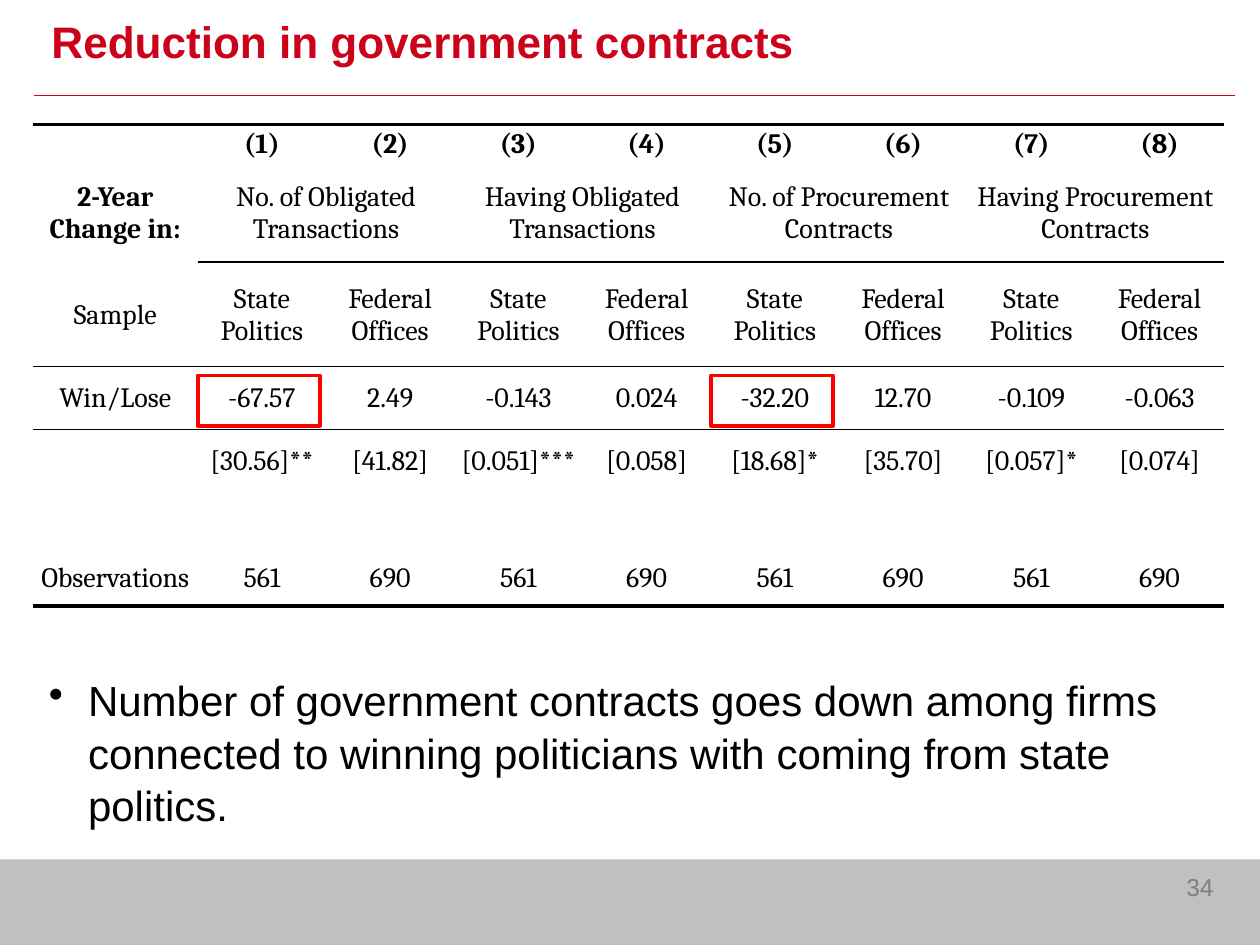
import lxml.etree
import pptx
import pptx.dml.color
import pptx.enum.shapes
import pptx.enum.text
import pptx.oxml
import pptx.oxml.ns
import pptx.util

ALIGN = pptx.enum.text.PP_ALIGN
ANCHOR = pptx.enum.text.MSO_ANCHOR
UNITS = 10
TABLE_LEFT, TABLE_TOP = 2.6, 9.9
COLUMNS = [13.1] + [10.18] * 8
ROWS = [3, 7.9, 8.3, 5, 5, 4.5, 4.5]
THICK, THIN = 2.25, 1
TABLE_TEXT = {"size": pptx.util.Pt(16), "name": "Cambria"}
NO_STYLE = "{2D5ABB26-0587-4C30-8999-92F81FD0307C}"

RESULTS = [
    [""] + [f"({number})" for number in range(1, 9)],
    ["2-Year Change in:", "No. of Obligated Transactions", None,
     "Having Obligated Transactions", None,
     "No. of Procurement Contracts", None,
     "Having Procurement Contracts", None],
    ["Sample"] + ["State Politics", "Federal Offices"] * 4,
    ["Win/Lose", "-67.57", "2.49", "-0.143", "0.024",
     "-32.20", "12.70", "-0.109", "-0.063"],
    ["", "[30.56]**", "[41.82]", "[0.051]***", "[0.058]",
     "[18.68]*", "[35.70]", "[0.057]*", "[0.074]"],
    [""] * 9,
    ["Observations"] + ["561", "690"] * 4,
]


def color(code):
    return pptx.dml.color.RGBColor.from_string(code)


def grid(*lengths):
    return [pptx.util.Inches(length / UNITS) for length in lengths]


def apply(target, values):
    for name, value in values.items():
        setattr(target, name, value)


def borders(row, column):
    """Return the rule widths of a table cell by side."""
    sides = {}
    if row == 0:
        sides["T"] = THICK
    if row == 3 or (row == 2 and column):
        sides["T"] = THIN
    if row == 2 or (row == 1 and column):
        sides["B"] = THIN
    if row == len(ROWS) - 1:
        sides["B"] = THICK
    return sides


class SlideBuilder:
    """Draws elements on one slide, measured in tenths of an inch."""

    def __init__(self, slide):
        self.slide = slide
        self.font = "Arial"

    def rectangle(self, area, fill=None, line=None):
        shape = self.slide.shapes.add_shape(
            pptx.enum.shapes.MSO_SHAPE.RECTANGLE, *grid(*area))
        shape.shadow.inherit = False
        for part, code in ((shape.fill, fill), (shape.line.fill, line)):
            if code:
                part.solid()
                part.fore_color.rgb = color(code)
            else:
                part.background()
        if line:
            shape.line.width = pptx.util.Pt(2)

    def rule(self, start, end, code):
        connector = self.slide.shapes.add_connector(
            pptx.enum.shapes.MSO_CONNECTOR.STRAIGHT, *grid(*start, *end))
        connector.line.color.rgb = color(code)
        connector.line.width = pptx.util.Pt(0.75)
        lxml.etree.SubElement(connector._element.spPr,
                              pptx.oxml.ns.qn("a:effectLst"))

    def text(self, area, words, size, code, bold=False, bullet=False,
             frame_format=None, paragraph_format=None):
        frame = self.slide.shapes.add_textbox(*grid(*area)).text_frame
        apply(frame, {"word_wrap": True, **(frame_format or {})})
        paragraph = frame.paragraphs[0]
        apply(paragraph, paragraph_format or {})
        if bullet:
            properties = paragraph._p.get_or_add_pPr()
            indent = grid(3.1)[0]
            properties.set("marL", str(indent))
            properties.set("indent", str(-indent))
            lxml.etree.SubElement(properties, pptx.oxml.ns.qn("a:buChar"), char="•")
        run = paragraph.add_run()
        run.text = words
        apply(run.font, {"name": self.font, "size": pptx.util.Pt(size), "bold": bold})
        run.font.color.rgb = color(code)

    def border(self, cell, side, width):
        cell._tc.get_or_add_tcPr().append(pptx.oxml.parse_xml(
            f'<a:ln{side} {pptx.oxml.ns.nsdecls("a")} w="{pptx.util.Pt(width)}">'
            '<a:solidFill><a:srgbClr val="000000"/></a:solidFill>'
            f'</a:ln{side}>'))

    def cell(self, cell, words, bold):
        left, bottom = grid(0.1, 0)
        apply(cell, {"margin_left": left, "margin_right": left, "margin_top": left,
                     "margin_bottom": bottom, "vertical_anchor": ANCHOR.MIDDLE})
        paragraph = cell.text_frame.paragraphs[0]
        paragraph.alignment = ALIGN.CENTER
        if not words:
            lxml.etree.SubElement(paragraph._p, pptx.oxml.ns.qn("a:endParaRPr"), sz="1600")
            return
        run = paragraph.add_run()
        run.text = words
        apply(run.font, {**TABLE_TEXT, "bold": bold})
        run.font.color.rgb = color("000000")

    def table(self, contents):
        area = (TABLE_LEFT, TABLE_TOP, sum(COLUMNS), sum(ROWS))
        table = self.slide.shapes.add_table(
            len(ROWS), len(COLUMNS), *grid(*area)).table
        apply(table, {"first_row": False, "horz_banding": False})
        table._tbl.tblPr.find(pptx.oxml.ns.qn("a:tableStyleId")).text = NO_STYLE
        for column, width in zip(table.columns, grid(*COLUMNS)):
            column.width = width
        for row, height in zip(table.rows, grid(*ROWS)):
            row.height = height
        for row, values in enumerate(contents):
            for column, words in enumerate(values):
                cell = table.cell(row, column)
                for side, width in borders(row, column).items():
                    self.border(cell, side, width)
                cell.fill.background()
                self.cell(cell, words, row == 0 or (row == 1 and column == 0))
                if words is None:
                    table.cell(row, column - 1).merge(cell)

    def highlight(self, column):
        left = TABLE_LEFT + sum(COLUMNS[:column])
        self.rectangle((left, 29.8, 9.7, 4), line="FF0000")


def main():
    presentation = pptx.Presentation()
    apply(presentation, dict(zip(("slide_width", "slide_height"), grid(100, 75))))
    builder = SlideBuilder(presentation.slides.add_slide(presentation.slide_layouts[6]))
    builder.rectangle((0, 68.2, 100, 6.8), fill="C0C0C0")
    builder.rule((2.7, 7.6), (98, 7.6), "CB021A")
    builder.text((3.1, 0.5, 92.5, 5.5), "Reduction in government contracts", 25.2,
                 "CB021A", bold=True, frame_format={"vertical_anchor": ANCHOR.MIDDLE})
    builder.text((2.9, 52.9, 94.2, 7.1),
                 "Number of government contracts goes down among firms connected "
                 "to winning politicians with coming from state politics.",
                 24, "000000", bullet=True,
                 frame_format={"auto_size": pptx.enum.text.MSO_AUTO_SIZE.SHAPE_TO_FIT_TEXT},
                 paragraph_format={"line_spacing": 1.04})
    builder.text((89.4, 68.7, 7.9, 5), "34", 14, "7F7F7F",
                 paragraph_format={"alignment": ALIGN.RIGHT})
    builder.table(RESULTS)
    for column in (1, 5):
        builder.highlight(column)
    presentation.save("out.pptx")


if __name__ == "__main__":
    main()
